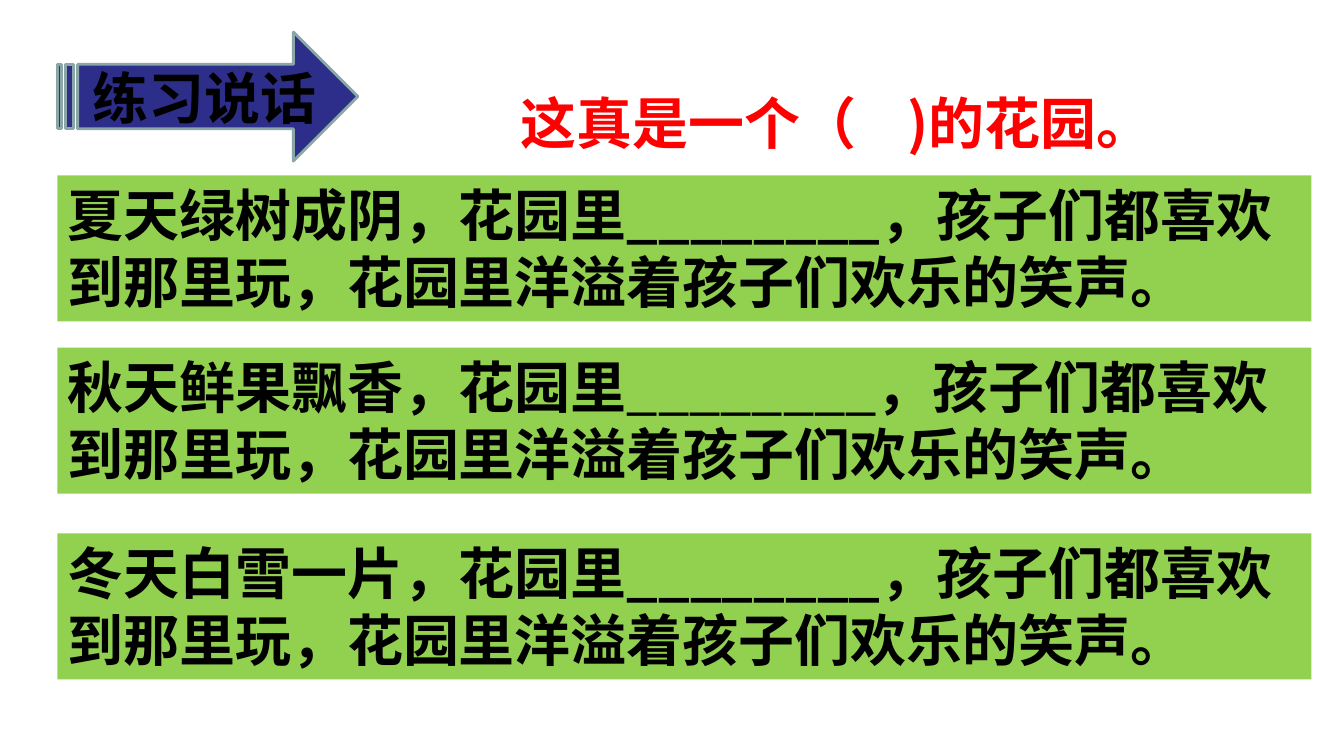
from pptx import Presentation
from pptx.dml.color import RGBColor
from pptx.enum.shapes import MSO_SHAPE
from pptx.enum.text import MSO_ANCHOR, MSO_AUTO_SIZE, PP_ALIGN
from pptx.oxml.ns import qn
from pptx.util import Cm, Pt

ARROW = MSO_SHAPE.STRIPED_RIGHT_ARROW
TOP, LEFT, NO_FIT = MSO_ANCHOR.TOP, PP_ALIGN.LEFT, MSO_AUTO_SIZE.NONE
TITLE_ONLY = 5

HEADING = "练习说话"
PROMPT = "这真是一个（    )的花园。"
BLANK = "________"
ENDING = "，孩子们都喜欢到那里玩，花园里洋溢着孩子们欢乐的笑声。"
SEASONS = [
    {"opening": "夏天绿树成阴，花园里", "top": 4.42, "bold_blank": True},
    {"opening": "秋天鲜果飘香，花园里", "top": 8.76, "bold_blank": False},
    {"opening": "冬天白雪一片，花园里", "top": 13.44, "bold_blank": True},
]

THEME = {
    "font": "Noto Sans CJK SC",
    "size": Pt(40),
    "leading": Pt(48),
    "ink": RGBColor(0x00, 0x00, 0x00),
    "prompt": RGBColor(0xFF, 0x00, 0x00),
    "panel": RGBColor(0x92, 0xD0, 0x50),
    "arrow": RGBColor(0x2D, 0x2D, 0x8A),
    "outline": RGBColor(0x8A, 0xA6, 0xA8),
}
MARGIN, PANEL_WIDTH, PANEL_HEIGHT = 1.45, 31.6, 3.68
FRAME = {"word_wrap": True, "auto_size": NO_FIT, "vertical_anchor": TOP}
PARAGRAPH = {"alignment": LEFT, "line_spacing": THEME["leading"]}


def apply(target, values):
    for name, value in values.items():
        setattr(target, name, value)


def place(sp, left, top, width, height):
    apply(sp, {"left": Cm(left), "top": Cm(top),
               "width": Cm(width), "height": Cm(height)})


def write(sp, runs, color):
    tf = sp.text_frame
    apply(tf, FRAME)
    p = tf.paragraphs[0]
    apply(p, PARAGRAPH)
    for text, bold in runs:
        r = p.add_run()
        r.text = text
        apply(r.font, {"name": THEME["font"], "size": THEME["size"], "bold": bold})
        r.font.color.rgb = color
        ea = r.font._element.makeelement(qn("a:ea"), {"typeface": THEME["font"]})
        r.font._element.find(qn("a:latin")).addnext(ea)


def add_text(shapes, box, runs, color):
    sp = shapes.add_textbox(*map(Cm, box))
    write(sp, runs, color)
    return sp


def main():
    prs = Presentation()
    apply(prs, {"slide_width": Cm(33.87), "slide_height": Cm(19.05)})
    s = prs.slides.add_slide(prs.slide_layouts[TITLE_ONLY])

    arrow = s.shapes.add_shape(ARROW, *map(Cm, (MARGIN, 0.81, 7.57, 3.25)))
    arrow.shadow.inherit = False
    arrow.fill.solid()
    arrow.fill.fore_color.rgb = THEME["arrow"]
    arrow.line.color.rgb = THEME["outline"]
    arrow.line.width = Pt(2)

    title = s.shapes.title
    title._element.addprevious(arrow._element)
    place(title, 2.08, 1.47, 6.27, 1.96)
    write(title, [(HEADING, True)], THEME["ink"])

    for season in SEASONS:
        runs = [(season["opening"], True), (BLANK, season["bold_blank"]), (ENDING, True)]
        box = (MARGIN, season["top"], PANEL_WIDTH, PANEL_HEIGHT)
        panel = add_text(s.shapes, box, runs, THEME["ink"])
        panel.fill.solid()
        panel.fill.fore_color.rgb = THEME["panel"]

    add_text(s.shapes, (12.88, 2.11, 17.27, 1.96), [(PROMPT, True)], THEME["prompt"])
    prs.save("out.pptx")


if __name__ == "__main__":
    main()
